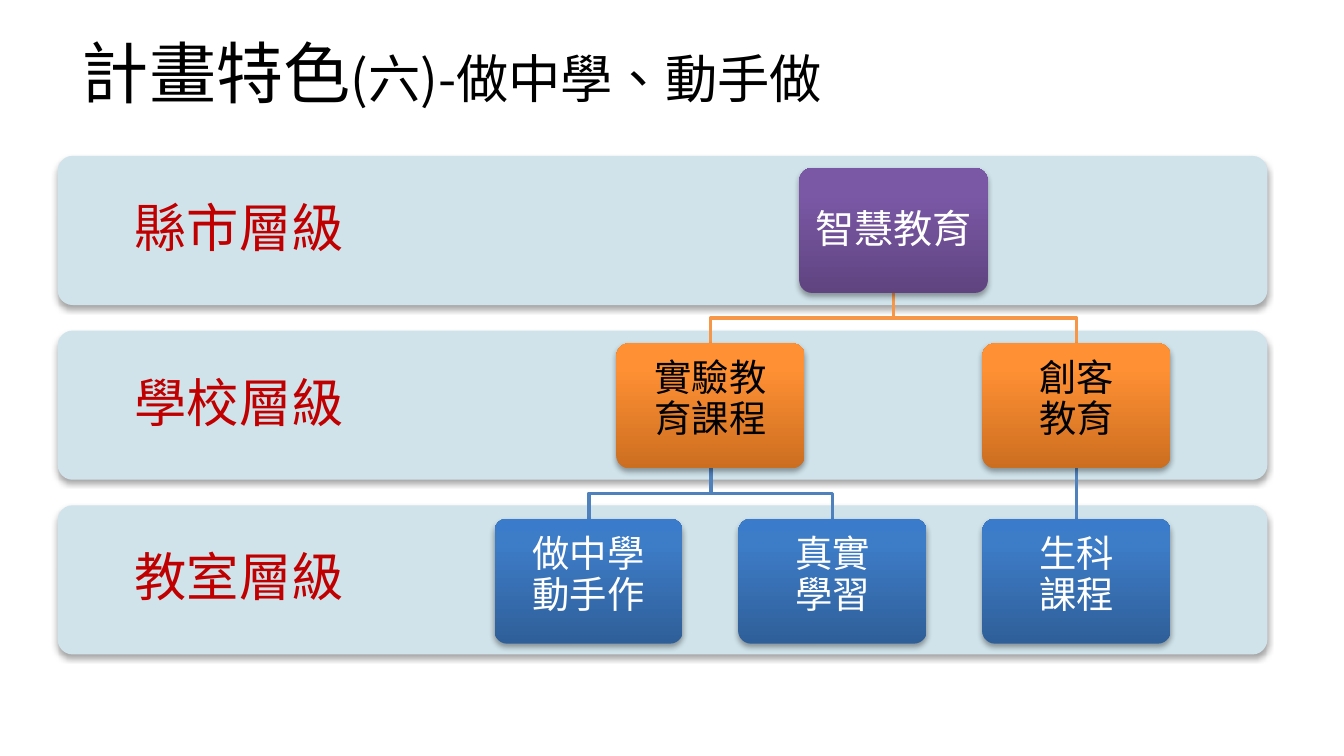
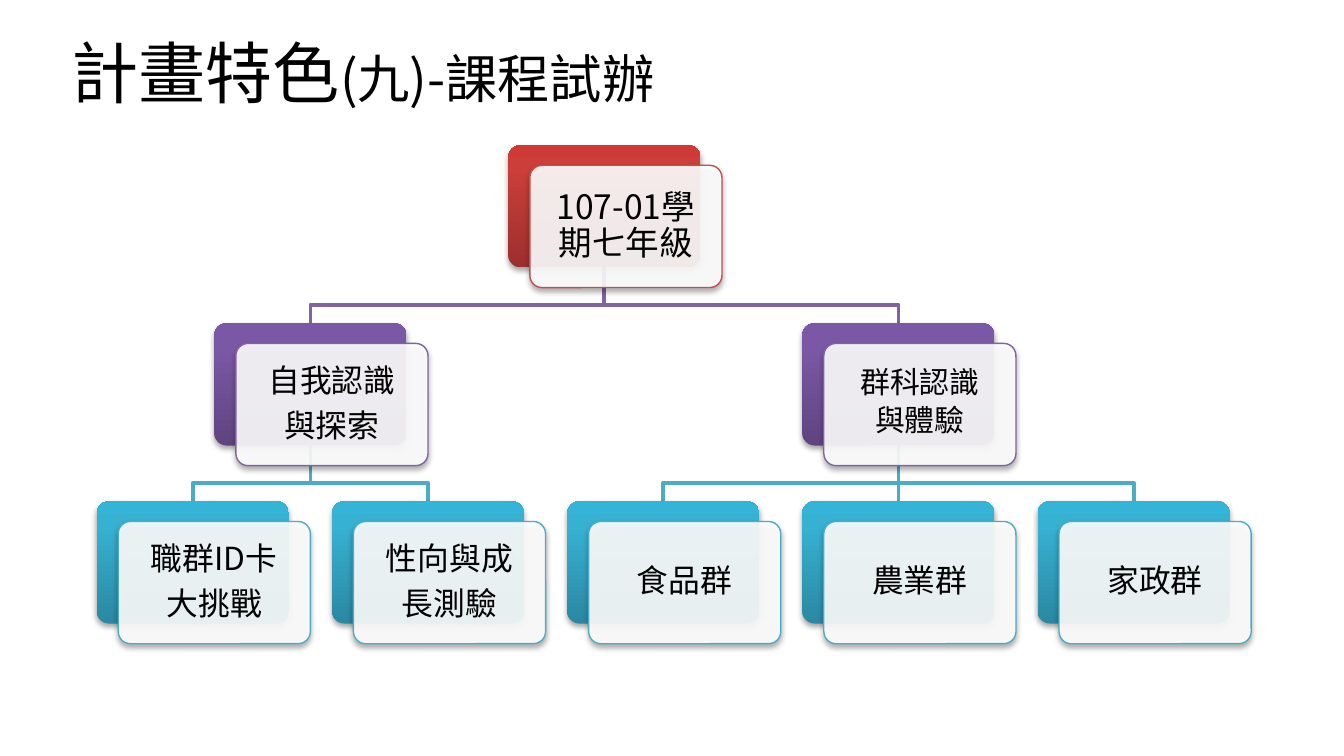
from copy import deepcopy
from dataclasses import dataclass, field

from lxml.etree import SubElement
from pptx import Presentation
from pptx.dml.color import RGBColor
from pptx.enum.lang import MSO_LANGUAGE_ID as Language
from pptx.enum.shapes import MSO_CONNECTOR as Connector, MSO_SHAPE as Shape
from pptx.enum.text import MSO_ANCHOR as Anchor, MSO_AUTO_SIZE as AutoSize, PP_ALIGN as Align
from pptx.oxml.ns import qn
from pptx.util import Inches, Pt

# Shared look
SLIDE_WIDTH = Inches(10)
SLIDE_HEIGHT = SLIDE_WIDTH * 9 // 16
FONT = "Noto Sans CJK SC"
BLACK, WHITE, LABEL_RED, BAND_BLUE = "000000", "FFFFFF", "C00000", "D0E3EA"
GRADIENT_STOPS = (0, 0.8, 1)
PURPLE = ("5F4480", "7B58A6", "7C57A8")
ORANGE = ("CC6E20", "FF9034", "FF9136")
BLUE = ("2F5F99", "3D7CC7", "3A7CCB")
RED = ("9C2F2D", "CB3E3A", "CE3B37")
TEAL = ("2A88A2", "37B1D2", "34B4D6")
TIGHT = Pt(15)
TITLE_LAYOUT = 5


@dataclass
class Level:
    gradient: tuple
    line: str
    text: str = BLACK


@dataclass
class Node:
    lines: list
    size: int
    spacing: object = 0.9
    children: list = field(default_factory=list)
    depth: int = 0
    left: float = 0
    top: float = 0
    shape: object = None


@dataclass
class TreeStyle:
    levels: list
    card_width: float
    card_height: float
    bend: float
    inset: float
    overlay: tuple = None


# Formatting helpers
def color(value):
    return RGBColor.from_string(value)


def apply(target, values):
    for name, value in values.items():
        setattr(target, name, value)


def add_run(paragraph, text, size, text_color):
    run = paragraph.add_run()
    run.text = text
    apply(run.font, {"size": Pt(size), "name": FONT,
                     "language_id": Language.TRADITIONAL_CHINESE})
    run.font.color.rgb = color(text_color)
    SubElement(run.font._element, qn("a:ea"), typeface=FONT)


def write_lines(shape, lines, size, text_color, inset, spacing=0.9):
    frame = shape.text_frame
    margins = {f"margin_{side}": Inches(inset) for side in ("left", "top", "right", "bottom")}
    apply(frame, {"word_wrap": True, "vertical_anchor": Anchor.MIDDLE, **margins})
    for index, line in enumerate(lines):
        paragraph = frame.add_paragraph() if index else frame.paragraphs[0]
        apply(paragraph, {"alignment": Align.CENTER, "line_spacing": spacing,
                          "space_after": Pt(0.35 * size)})
        add_run(paragraph, line, size, text_color)


def add_shadow(shape):
    shape.shadow.inherit = False
    effects = shape._element.spPr.find(qn("a:effectLst"))
    shadow = SubElement(effects, qn("a:outerShdw"), blurRad=str(Pt(3.1)), dist=str(Pt(1.8)),
                        dir="5400000", rotWithShape="0")
    shade = SubElement(shadow, qn("a:srgbClr"), val=BLACK)
    SubElement(shade, qn("a:alpha"), val="35000")


def fill_gradient(shape, colors):
    shape.fill.gradient()
    shape.fill.gradient_angle = 90
    stop_list = shape._element.spPr.find(".//" + qn("a:gsLst"))
    stop_list.append(deepcopy(stop_list[-1]))
    for stop, position, value in zip(shape.fill.gradient_stops, GRADIENT_STOPS, colors):
        stop.position = position
        stop.color.rgb = color(value)


def fill_solid(shape, value, opacity=100):
    shape.fill.solid()
    shape.fill.fore_color.rgb = color(value)
    if opacity < 100:
        solid = shape._element.spPr.find(".//" + qn("a:srgbClr"))
        SubElement(solid, qn("a:alpha"), val=str(opacity * 1000))


def set_line(shape, value, width):
    shape.line.color.rgb = color(value)
    shape.line.width = Pt(width)


def add_panel(slide, left, top, width, height):
    panel = slide.shapes.add_shape(Shape.ROUNDED_RECTANGLE, *map(Inches, (left, top, width, height)))
    panel.adjustments[0] = 0.1
    panel.line.fill.background()
    add_shadow(panel)
    return panel


# Title
def add_titled_slide(presentation, left, number, topic):
    slide = presentation.slides.add_slide(presentation.slide_layouts[TITLE_LAYOUT])
    title = slide.shapes.title
    apply(title, {"left": Inches(left), "top": Inches(0.06),
                  "width": Inches(9), "height": Inches(0.94)})
    apply(title.text_frame, {"vertical_anchor": Anchor.MIDDLE, "word_wrap": True,
                             "auto_size": AutoSize.NONE})
    paragraph = title.text_frame.paragraphs[0]
    paragraph.alignment = Align.LEFT
    add_run(paragraph, "計畫特色", 36, BLACK)
    add_run(paragraph, f"({number})-{topic}", 28, BLACK)
    return slide


# Labelled bands
def add_bands(slide, box, labels, band_height):
    left, top, width, height = box
    pitch = (height - band_height) / (len(labels) - 1)
    for index, label in enumerate(labels):
        band_top = top + index * pitch
        fill_solid(add_panel(slide, left, band_top, width, band_height), BAND_BLUE)
        text_box = slide.shapes.add_textbox(*map(Inches, (left, band_top, 0.3 * width, band_height)))
        write_lines(text_box, [label], 28, LABEL_RED, 0.22)


# Tree of cards
def walk(node):
    yield node
    for child in node.children:
        yield from walk(child)


def arrange(root, box, style):
    """Spread the leaves evenly and centre each parent over its children."""
    left, top, width, height = box
    nodes = list(walk(root))
    for node in nodes:
        for child in node.children:
            child.depth = node.depth + 1
    leaves = [node for node in nodes if not node.children]
    column_pitch = (width - style.card_width) / (len(leaves) - 1)
    row_pitch = (height - style.card_height) / (len(style.levels) - 1)
    for index, leaf in enumerate(leaves):
        leaf.left = left + index * column_pitch
    for node in reversed(nodes):
        node.top = top + node.depth * row_pitch
        if node.children:
            node.left = sum(child.left for child in node.children) / len(node.children)


def add_link(slide, parent, child, style):
    start_x, end_x = (node.left + style.card_width / 2 for node in (parent, child))
    start_y, end_y = parent.top + style.card_height, child.top
    straight = abs(start_x - end_x) < 0.01
    if straight:
        link = slide.shapes.add_connector(
            Connector.STRAIGHT, *map(Inches, (start_x, start_y, end_x, end_y)))
        SubElement(link._element.spPr, qn("a:effectLst"))
    else:
        bend_y = start_y + style.bend * (end_y - start_y)
        builder = slide.shapes.build_freeform(Inches(start_x), Inches(start_y))
        corners = ((start_x, bend_y), (end_x, bend_y), (end_x, end_y))
        builder.add_line_segments([(Inches(x), Inches(y)) for x, y in corners], close=False)
        link = builder.convert_to_shape()
        link.fill.background()
        link.shadow.inherit = False
    set_line(link, style.levels[child.depth].line, 2)
    return (link, parent, child) if straight else None


def add_card(slide, node, style):
    level = style.levels[node.depth]
    size = (style.card_width, style.card_height)
    node.shape = face = add_panel(slide, node.left, node.top, *size)
    fill_gradient(face, level.gradient)
    if style.overlay:
        shift_x, shift_y = style.overlay
        face = add_panel(slide, node.left + shift_x, node.top + shift_y, *size)
        fill_solid(face, WHITE, 90)
        set_line(face, level.line, 0.75)
    write_lines(face, node.lines, node.size, level.text, style.inset, node.spacing)


def add_tree(slide, root, box, style):
    arrange(root, box, style)
    # Links lie behind the cards, and straight ones are joined once the cards exist
    links = [add_link(slide, node, child, style) for node in walk(root) for child in node.children]
    for node in walk(root):
        add_card(slide, node, style)
    for connector, parent, child in filter(None, links):
        connector.begin_connect(parent.shape, 2)
        connector.end_connect(child.shape, 0)


# Slides
def build_hands_on_slide(presentation):
    slide = add_titled_slide(presentation, 0.51, "六", "做中學、動手做")
    add_bands(slide, (0.43, 1.16, 9, 3.71), ["縣市層級", "學校層級", "教室層級"], 1.11)
    root = Node(["智慧教育"], 21, children=[
        Node(["實驗教", "育課程"], 20, TIGHT, [
            Node(["做中學", "動手作"], 20, TIGHT),
            Node(["真實", "學習"], 20, TIGHT)]),
        Node(["創客", "教育"], 20, TIGHT, [
            Node(["生科", "課程"], 20, TIGHT)])])
    levels = [Level(PURPLE, "8064A2", WHITE), Level(ORANGE, "F79646"), Level(BLUE, "4F81BD", WHITE)]
    style = TreeStyle(levels, card_width=1.4, card_height=0.93, bend=0.5, inset=0.08)
    add_tree(slide, root, (3.68, 1.25, 5.03, 3.54), style)


def build_trial_courses_slide(presentation):
    slide = add_titled_slide(presentation, 0.43, "九", "課程試辦")
    root = Node(["107-01學期七年級"], 18, children=[
        Node(["自我認識", "與探索"], 17, children=[
            Node(["職群ID卡", "大挑戰"], 17),
            Node(["性向與成", "長測驗"], 17)]),
        Node(["群科認識", "與體驗"], 16, TIGHT, [
            Node([name], 17) for name in ("食品群", "農業群", "家政群")])])
    levels = [Level(RED, "C0504D"), Level(PURPLE, "8064A2"), Level(TEAL, "4BACC6")]
    style = TreeStyle(levels, card_width=1.43, card_height=0.91, bend=0.67, inset=0.07,
                      overlay=(0.16, 0.15))
    add_tree(slide, root, (0.72, 1.08, 8.43, 3.56), style)


def main():
    presentation = Presentation()
    apply(presentation, {"slide_width": SLIDE_WIDTH, "slide_height": SLIDE_HEIGHT})
    build_hands_on_slide(presentation)
    build_trial_courses_slide(presentation)
    presentation.save("out.pptx")


if __name__ == "__main__":
    main()
